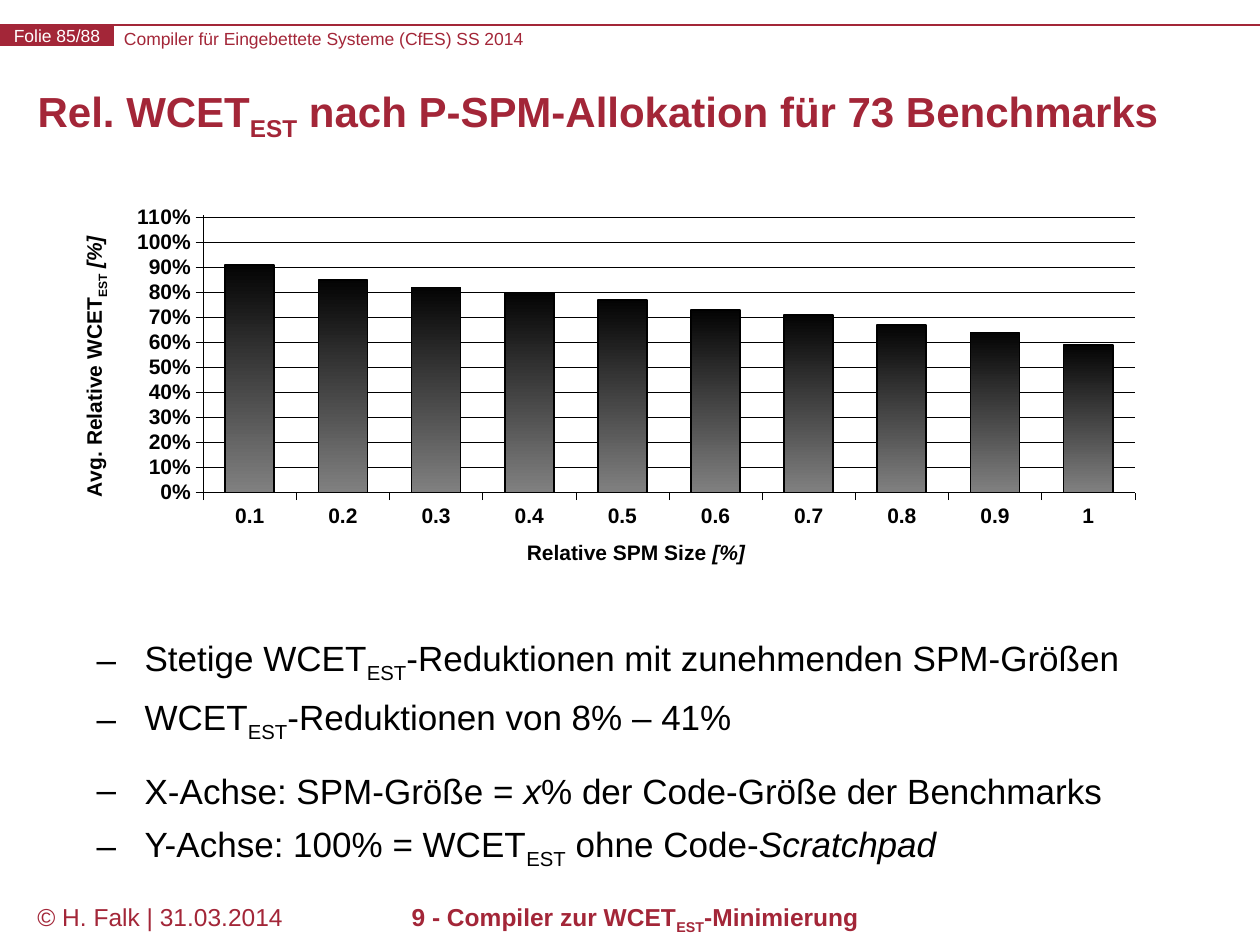
from lxml import etree
from pptx import Presentation
from pptx.chart.data import CategoryChartData
from pptx.dml.color import RGBColor
from pptx.enum.chart import XL_CHART_TYPE, XL_TICK_MARK
from pptx.enum.shapes import MSO_CONNECTOR, MSO_SHAPE
from pptx.enum.text import MSO_ANCHOR, MSO_AUTO_SIZE, PP_ALIGN
from pptx.oxml import parse_xml
from pptx.oxml.ns import nsdecls, qn
from pptx.util import Pt

PX = 914400 / 126
COLUMNS = XL_CHART_TYPE.COLUMN_CLUSTERED
OUTSIDE = XL_TICK_MARK.OUTSIDE
STRAIGHT = MSO_CONNECTOR.STRAIGHT
RECT = MSO_SHAPE.RECTANGLE
TOP, MIDDLE = MSO_ANCHOR.TOP, MSO_ANCHOR.MIDDLE
NO_FIT = MSO_AUTO_SIZE.NONE
LEFT, CENTER = PP_ALIGN.LEFT, PP_ALIGN.CENTER

RED, BLACK, WHITE, GREY = "A32638", "000000", "FFFFFF", "808080"
SUB = ("EST", "sub")


def emu(*lengths):
    return [round(n * PX) for n in lengths]


def rgb(value):
    return RGBColor.from_string(value)


class SlideBuilder:
    font = "Arial"

    def __init__(self, prs):
        self.s = prs.slides.add_slide(prs.slide_layouts[1])

    def style(self, font, size, color, bold=False):
        font.name = self.font
        font.size = Pt(size)
        font.bold = bold
        font.color.rgb = rgb(color)

    def runs(self, p, parts, size, color, bold=False):
        for text, kind in parts:
            r = p.add_run()
            r.text = text
            self.style(r.font, size, color, bold)
            if kind == "sub":
                r.font._element.set("baseline", "-25000")
            if kind == "italic":
                r.font.italic = True

    def frame(self, sp, anchor=TOP, inset=None, wrap=True):
        tf = sp.text_frame
        tf.word_wrap = wrap
        tf.auto_size = NO_FIT
        tf.vertical_anchor = anchor
        if inset is not None:
            tf.margin_left = tf.margin_right = inset
            tf.margin_top = tf.margin_bottom = inset
        return tf

    def place(self, sp, box):
        sp.left, sp.top, sp.width, sp.height = emu(*box)

    def line(self, x1, y1, x2, y2, color):
        c = self.s.shapes.add_connector(STRAIGHT, *emu(x1, y1, x2, y2))
        c.line.color.rgb = rgb(color)
        c.line.width = Pt(0.75)
        etree.SubElement(c._element.spPr, qn("a:effectLst"))

    def text(self, box, parts, size, color, bold=False, align=LEFT, inset=None):
        sp = self.s.shapes.add_textbox(*emu(*box))
        p = self.frame(sp, inset=inset).paragraphs[0]
        p.alignment = align
        self.runs(p, parts, size, color, bold)

    def label(self, box, text, fill):
        sp = self.s.shapes.add_shape(RECT, *emu(*box))
        sp.shadow.inherit = False
        sp.fill.solid()
        sp.fill.fore_color.rgb = rgb(fill)
        sp.line.fill.background()
        p = self.frame(sp, MIDDLE, 0, False).paragraphs[0]
        p.alignment = CENTER
        self.runs(p, [(text, "")], 10, WHITE)

    def title(self, box, parts):
        sp = self.s.shapes.title
        self.place(sp, box)
        p = self.frame(sp, MIDDLE).paragraphs[0]
        p.alignment = LEFT
        p.line_spacing = Pt(24)
        self.runs(p, parts, 24, RED, True)

    def bullets(self, box, items):
        sp = self.s.placeholders[1]
        self.place(sp, box)
        tf = self.frame(sp)
        indent, = emu(48)
        for i, (before, parts) in enumerate(items):
            p = tf.add_paragraph() if i else tf.paragraphs[0]
            p.line_spacing = 1.2
            p.space_before = Pt(before)
            pPr = p._p.get_or_add_pPr()
            pPr.set("marL", str(indent))
            pPr.set("indent", str(-indent))
            etree.SubElement(pPr, qn("a:buChar")).set("char", "–")
            self.runs(p, parts, 20, BLACK)

    def axis(self, axis, title):
        axis.major_tick_mark = OUTSIDE
        axis.format.line.color.rgb = rgb(BLACK)
        axis.format.line.width = Pt(0.25)
        labels = axis.tick_labels
        labels.number_format = "0%"
        labels.number_format_is_linked = False
        self.style(labels.font, 12, BLACK, True)
        self.runs(axis.axis_title.text_frame.paragraphs[0], title, 12, BLACK, True)

    def column_chart(self, box, cats, vals, x_title, y_title, plot_area):
        data = CategoryChartData(number_format="0%")
        data.categories = cats
        data.add_series("Series 1", vals)
        chart = self.s.shapes.add_chart(COLUMNS, *emu(*box), data).chart
        chart.has_legend = False
        chart.has_title = False
        self.style(chart.font, 11, BLACK)

        self.axis(chart.category_axis, x_title)
        y = chart.value_axis
        self.axis(y, y_title)
        y.minimum_scale, y.maximum_scale, y.major_unit = 0, 1.11, 0.1
        y.has_major_gridlines = True
        y.major_gridlines.format.line.color.rgb = rgb(BLACK)
        y.major_gridlines.format.line.width = Pt(0.25)

        plot = chart.plots[0]
        plot.gap_width, plot.overlap = 90, -20
        plot.vary_by_categories = False
        fmt = plot.series[0].format
        fmt.fill.gradient()
        fmt.fill.gradient_angle = 270
        for stop, color in zip(fmt.fill.gradient_stops, ("040404", GREY)):
            stop.color.rgb = rgb(color)
        fmt.line.color.rgb = rgb(BLACK)
        fmt.line.width = Pt(1)

        area = chart._chartSpace.chart.plotArea
        for old in area.findall(qn("c:layout")):
            area.remove(old)
        places = "".join(f'<c:{k} val="{v}"/>' for k, v in zip("xywh", plot_area))
        area.insert(0, parse_xml(
            f'<c:layout {nsdecls("c")}><c:manualLayout><c:layoutTarget val="inner"/>'
            f'<c:xMode val="edge"/><c:yMode val="edge"/>{places}'
            "</c:manualLayout></c:layout>"))


def main():
    prs = Presentation()
    prs.slide_width, prs.slide_height = emu(1260, 945)
    b = SlideBuilder(prs)

    b.line(0, 25, 1260, 25, RED)
    b.text((124, 28, 832, 21),
           [("Compiler für Eingebettete Systeme (CfES) SS 2014", "")],
           10, RED, inset=0)
    b.label((0, 25, 114, 21), "Folie 85/88", RED)
    b.text((25, 896, 277, 63), [("© H. Falk | 31.03.2014", "")], 14, RED)
    b.text((253, 896, 764, 63),
           [("9 - Compiler zur WCET", ""), SUB, ("-Minimierung", "")],
           14, RED, True, CENTER)

    b.title((25, 76, 1211, 91),
            [("Rel. WCET", ""), SUB,
             (" nach P-SPM-Allokation für 73 Benchmarks", "")])
    b.bullets((84, 621, 1111, 232), [
        (0, [("Stetige WCET", ""), SUB,
             ("-Reduktionen mit zunehmenden SPM-Größen", "")]),
        (1, [("WCET", ""), SUB, ("-Reduktionen von 8% – 41%", "")]),
        (10, [("X-Achse: SPM-Größe = ", ""), ("x", "italic"),
              ("% der Code-Größe der Benchmarks", "")]),
        (1, [("Y-Achse: 100% = WCET", ""), SUB, (" ohne Code-", ""),
             ("Scratchpad", "italic")]),
    ])
    b.column_chart(
        (64, 195, 1071, 397),
        [n / 10 for n in range(1, 11)],
        [0.91, 0.85, 0.82, 0.8, 0.77, 0.73, 0.71, 0.67, 0.64, 0.59],
        [("Relative SPM Size ", ""), ("[%]", "italic")],
        [("Avg. Relative WCET", ""), SUB, (" ", ""), ("[%]", "italic")],
        (0.13, 0.05, 0.87, 0.7))

    prs.save("out.pptx")


if __name__ == "__main__":
    main()
